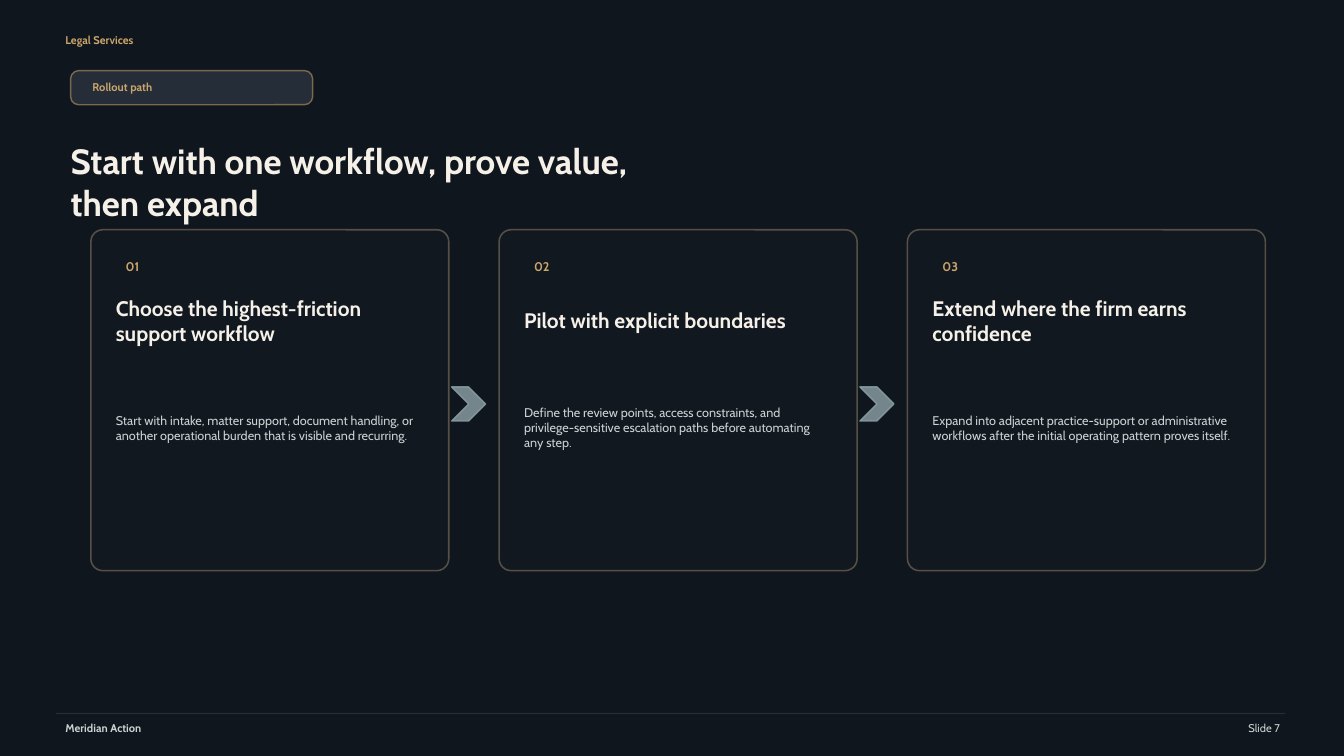
from lxml.etree import SubElement
from pptx import Presentation
from pptx.dml.color import RGBColor
from pptx.enum.shapes import MSO_CONNECTOR as Link, MSO_SHAPE as Shape
from pptx.enum.text import MSO_ANCHOR as Anchor, MSO_AUTO_SIZE as AutoSize, PP_ALIGN as Align
from pptx.oxml.ns import qn
from pptx.util import Cm, Pt

COLORS = {
    "night": "10161E", "panel": "2A333F", "card": "202934",
    "gold": "CBA56B", "sand": "E2C698", "ivory": "F6F1E8",
    "mist": "CBD2D2", "steel": "8DA3A8",
}
STEPS = [
    ("Choose the highest-friction support workflow",
     "Start with intake, matter support, document handling, or another "
     "operational burden that is visible and recurring."),
    ("Pilot with explicit boundaries",
     "Define the review points, access constraints, and privilege-sensitive "
     "escalation paths before automating any step."),
    ("Extend where the firm earns confidence",
     "Expand into adjacent practice-support or administrative workflows after "
     "the initial operating pattern proves itself."),
]
SLIDE_W, SLIDE_H = 33.87, 19.05
CARD_LEFT, CARD_PITCH, CARD_INSET = 2.29, 10.29, 0.63


class Deck:
    """Holds the style and the current slide."""
    font = "Cabin"

    def __init__(self):
        self.prs = Presentation()
        self.prs.slide_width, self.prs.slide_height = Cm(SLIDE_W), Cm(SLIDE_H)

    def new_slide(self, color):
        self.slide = self.prs.slides.add_slide(self.prs.slide_layouts[5])
        self.paint(self.slide.background.fill, color)

    def paint(self, fill, color, alpha=100):
        fill.solid()
        fill.fore_color.rgb = RGBColor.from_string(COLORS[color])
        if alpha < 100:
            srgb = fill._xPr.find(qn("a:solidFill")).find(qn("a:srgbClr"))
            SubElement(srgb, qn("a:alpha"), val=str(alpha * 1000))

    def outline(self, line, color, width=1, alpha=100):
        line.width = Pt(width)
        self.paint(line.fill, color, alpha)

    def shape(self, kind, box, fill, line, adj=None):
        s = self.slide.shapes.add_shape(kind, *map(Cm, box))
        s.shadow.inherit = False
        self.paint(s.fill, *fill)
        self.outline(s.line, *line)
        if adj is not None:
            s.adjustments[0] = adj

    def set_text(self, s, text, size, color, bold, align, inset):
        tf = s.text_frame
        tf.word_wrap, tf.auto_size = True, AutoSize.NONE
        tf.vertical_anchor = Anchor.MIDDLE
        if not inset:
            tf.margin_left = tf.margin_right = tf.margin_top = tf.margin_bottom = 0
        p = tf.paragraphs[0]
        p.alignment = align
        r = p.add_run()
        r.text = text
        r.font.name, r.font.size, r.font.bold = self.font, Pt(size), bold
        r.font.color.rgb = RGBColor.from_string(COLORS[color])

    def text(self, box, text, size, color, bold=True, align=Align.LEFT, inset=True):
        s = self.slide.shapes.add_textbox(*map(Cm, box))
        self.set_text(s, text, size, color, bold, align, inset)

    def title(self, box, text, size, color):
        s = self.slide.shapes.title
        s.left, s.top, s.width, s.height = map(Cm, box)
        self.set_text(s, text, size, color, True, Align.LEFT, False)
        self.slide.shapes._spTree.append(s._element)  # in front of the backdrop

    def rule(self, x1, x2, y, color, alpha):
        c = self.slide.shapes.add_connector(Link.STRAIGHT, Cm(x1), Cm(y), Cm(x2), Cm(y))
        self.outline(c.line, color, 1, alpha)
        SubElement(c._element.spPr, qn("a:effectLst"))

    def step(self, number, heading, body):
        left = CARD_LEFT + (number - 1) * CARD_PITCH
        x = left + CARD_INSET
        self.shape(Shape.ROUNDED_RECTANGLE, (left, 5.79, 9.02, 8.59),
                   ("card", 12), ("sand", 1.1, 32), 0.035)
        self.text((x, 6.48, 1.27, 0.46), f"{number:02}", 9, "gold")
        self.text((x, 7.37, 7.37, 1.4), heading, 15, "ivory", inset=False)
        self.text((x, 9.19, 7.62, 3.18), body, 9, "mist", bold=False, inset=False)
        if number < len(STEPS):
            self.shape(Shape.CHEVRON, (left + 9.09, 9.75, 0.86, 0.86),
                       ("steel", 80), ("steel", 1, 80))


def main():
    deck = Deck()
    deck.new_slide("night")

    # Backdrop and header
    deck.shape(Shape.RECTANGLE, (0, 0, SLIDE_W, SLIDE_H), ("night",), ("night",))
    deck.text((1.4, 0.76, 8.13, 0.51), "Legal Services", 8, "gold")
    deck.shape(Shape.ROUNDED_RECTANGLE, (1.78, 1.78, 6.1, 0.86),
               ("panel", 82), ("gold", 1, 55), 0.235)
    deck.text((2.08, 1.98, 5.49, 0.41), "Rollout path", 8, "gold")
    deck.title((1.78, 2.67, 15.49, 3.81),
               "Start with one workflow, prove value, then expand", 25, "ivory")

    # Step cards with chevrons between them
    for number, (heading, body) in enumerate(STEPS, 1):
        deck.step(number, heading, body)

    # Footer
    deck.rule(1.4, 32.39, 17.98, "panel", 80)
    deck.text((1.4, 18.08, 5.59, 0.51), "Meridian Action", 8, "mist")
    deck.text((26.67, 18.08, 5.84, 0.51), "Slide 7", 8, "mist",
              bold=False, align=Align.RIGHT)

    deck.prs.save("out.pptx")


if __name__ == "__main__":
    main()
